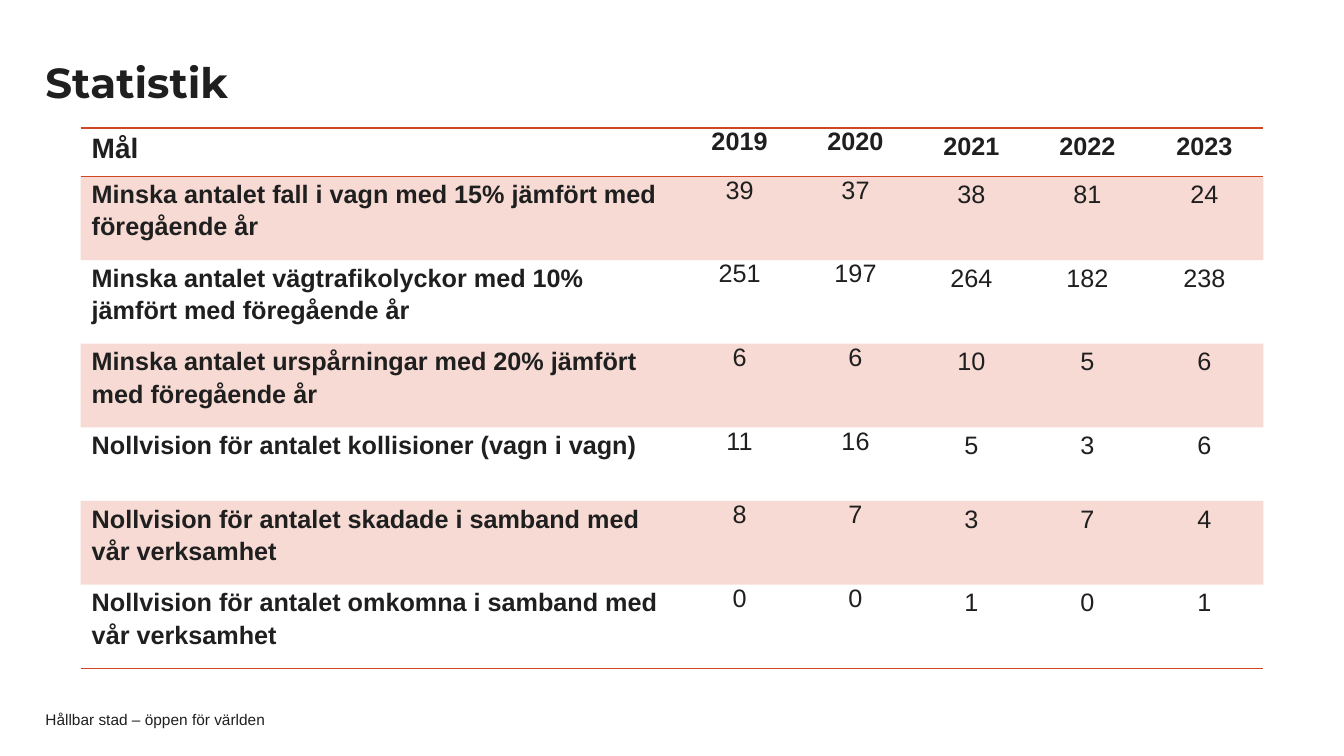
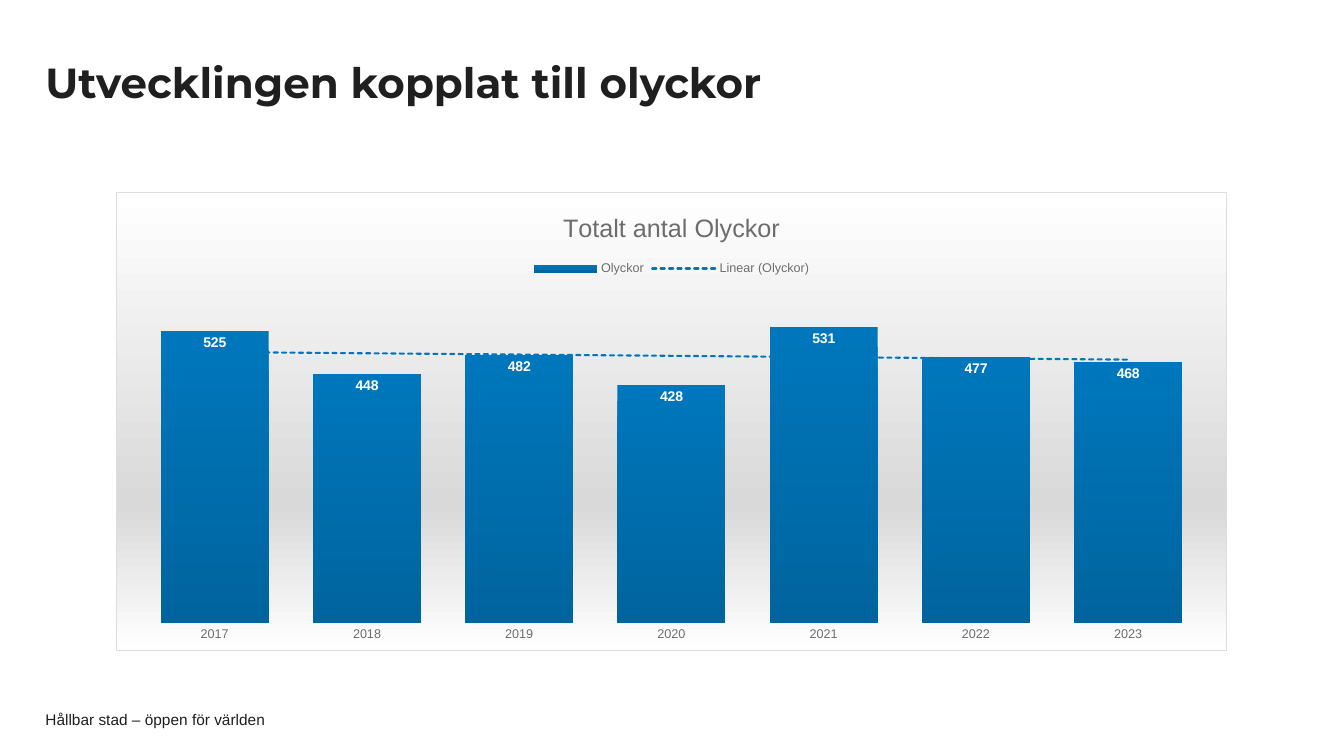
from dataclasses import dataclass

from lxml import etree
from pptx import Presentation
from pptx.chart.data import CategoryChartData
from pptx.dml.color import RGBColor
from pptx.enum.chart import (XL_CHART_TYPE, XL_LABEL_POSITION,
                             XL_LEGEND_POSITION, XL_TICK_MARK)
from pptx.enum.text import MSO_ANCHOR, PP_ALIGN
from pptx.oxml import parse_xml
from pptx.oxml.ns import nsdecls, qn
from pptx.util import Pt

LEFT, CENTER = PP_ALIGN.LEFT, PP_ALIGN.CENTER
MIDDLE = MSO_ANCHOR.MIDDLE
COLUMN = XL_CHART_TYPE.COLUMN_CLUSTERED
INSIDE = XL_LABEL_POSITION.INSIDE_END
TOP = XL_LEGEND_POSITION.TOP
NO_TICK = XL_TICK_MARK.NONE
PLAIN_GRID = "{2D5ABB26-0587-4C30-8999-92F81FD0307C}"


@dataclass(frozen=True)
class Theme:
    ink: str = "1F1F1F"
    gray: str = "6D6D6D"
    mist: str = "D9D9D9"
    edge: str = "DDDDDD"
    white: str = "FFFFFF"
    red: str = "D24723"
    blue: str = "0077BC"
    navy: str = "00649E"
    body: str = "Arial"
    head: str = "Montserrat"
    title: int = 30
    goal: int = 20
    cell: int = 18
    foot: int = 11
    label: int = 10
    axis: int = 9


T = Theme()

FOOTER = "Hållbar stad – öppen för världen"
WIDTHS = [596, 115, 115, 115, 115, 117]
HEIGHTS = [48, 83, 83, 83, 73, 83, 83]
GOALS = [
    ("Mål", 2019, 2020, 2021, 2022, 2023),
    ("Minska antalet fall i vagn med 15% jämfört med föregående år",
     39, 37, 38, 81, 24),
    ("Minska antalet vägtrafikolyckor med 10% jämfört med föregående år",
     251, 197, 264, 182, 238),
    ("Minska antalet urspårningar med 20% jämfört med föregående år",
     6, 6, 10, 5, 6),
    ("Nollvision för antalet kollisioner (vagn i vagn)", 11, 16, 5, 3, 6),
    ("Nollvision för antalet skadade i samband med vår verksamhet",
     8, 7, 3, 7, 4),
    ("Nollvision för antalet omkomna i samband med vår verksamhet",
     0, 0, 1, 0, 1),
]
YEARS = [str(year) for year in range(2017, 2024)]
COUNTS = [525, 448, 482, 428, 531, 477, 468]


def px(n):
    """Turn px, 100 to the inch, into EMU."""
    return n * 9144


def style(font, size, color=T.ink, face=T.body, bold=False):
    font.size, font.name, font.bold = Pt(size), face, bold
    font.color.rgb = RGBColor.from_string(color)


def write(frame, words, align=LEFT, lead=None, after=None, **look):
    """Put one formatted paragraph in a text frame."""
    para = frame.paragraphs[0]
    para.alignment = align
    if lead:
        para.line_spacing = lead
    if after:
        para.space_after = Pt(after)
    run = para.add_run()
    run.text = words
    style(run.font, **look)


def add_text(slide, words, left, top, width, height, pad=0, **look):
    frame = slide.shapes.add_textbox(
        px(left), px(top), px(width), px(height)).text_frame
    frame.word_wrap = True
    frame.vertical_anchor = MIDDLE
    frame.margin_left = frame.margin_right = 0
    frame.margin_top = frame.margin_bottom = px(pad)
    write(frame, words, **look)


def add_slide(deck, title):
    """Add a blank slide with the shared title and footer."""
    slide = deck.slides.add_slide(deck.slide_layouts[6])
    add_text(slide, FOOTER, 45, 706, 945, 16, size=T.foot)
    add_text(slide, title, 45, 44, 1003, 81, pad=5, lead=0.9,
             size=T.title, face=T.head, bold=True)
    return slide


def rule(cell, side):
    """Draw a thin red line on a cell's top (T) or bottom (B)."""
    cell._tc.get_or_add_tcPr().insert(0, parse_xml(
        f'<a:ln{side} {nsdecls("a")} w="12700"><a:solidFill>'
        f'<a:srgbClr val="{T.red}"/></a:solidFill></a:ln{side}>'))


def tint(cell):
    cell.fill.solid()
    cell.fill.fore_color.rgb = RGBColor.from_string(T.red)
    color = cell._tc.tcPr.find(".//" + qn("a:srgbClr"))
    etree.SubElement(color, qn("a:alpha"), val="20000")


def fill_cell(cell, value, row, col):
    cell.margin_left = cell.margin_right = px(11)
    cell.margin_top = cell.margin_bottom = 0
    loose = col not in (1, 2)
    write(cell.text_frame, str(value),
          align=CENTER if col else LEFT,
          lead=1.15 if loose else None, after=8 if loose else None,
          size=T.cell if row or col else T.goal,
          bold=row == 0 or col == 0)
    if row % 2:
        tint(cell)
    else:
        cell.fill.background()
    if row in (0, len(GOALS) - 1):
        rule(cell, "B")
    if row == 0:
        rule(cell, "T")


def add_goals(slide):
    table = slide.shapes.add_table(
        len(GOALS), len(WIDTHS), px(80), px(127),
        px(sum(WIDTHS)), px(sum(HEIGHTS))).table
    table.first_row = table.horz_banding = False
    table._tbl.tblPr.find(qn("a:tableStyleId")).text = PLAIN_GRID
    for col, width in zip(table.columns, WIDTHS):
        col.width = px(width)
    for r, (height, goal) in enumerate(zip(HEIGHTS, GOALS)):
        table.rows[r].height = px(height)
        for c, value in enumerate(goal):
            fill_cell(table.cell(r, c), value, r, c)


def fade(*stops):
    """Return the XML of a fill that runs from top to bottom."""
    marks = "".join(
        f'<a:gs pos="{at * 1000}"><a:srgbClr val="{color}"/></a:gs>'
        for at, color in stops)
    return (f'<a:gradFill {nsdecls("a")}><a:gsLst>{marks}</a:gsLst>'
            '<a:lin ang="5400000" scaled="0"/></a:gradFill>')


def add_trend(series):
    series._element.find(qn("c:cat")).addprevious(parse_xml(
        f'<c:trendline {nsdecls("c", "a")}><c:spPr><a:ln w="19050" cap="rnd">'
        f'<a:solidFill><a:srgbClr val="{T.blue}"/></a:solidFill>'
        '<a:prstDash val="sysDash"/></a:ln></c:spPr>'
        '<c:trendlineType val="linear"/><c:dispRSqr val="0"/>'
        '<c:dispEq val="0"/></c:trendline>'))


def back(chart):
    """Give the chart area its fade and thin border."""
    area = fade((0, T.white), (68, T.mist), (100, T.white))
    chart._chartSpace.find(qn("c:chart")).addnext(parse_xml(
        f'<c:spPr {nsdecls("c", "a")}>{area}<a:ln w="9525"><a:solidFill>'
        f'<a:srgbClr val="{T.edge}"/></a:solidFill></a:ln></c:spPr>'))


def add_bars(slide):
    data = CategoryChartData()
    data.categories = YEARS
    data.add_series("Olyckor", COUNTS)
    chart = slide.shapes.add_chart(
        COLUMN, px(115), px(190), px(1102), px(456), data).chart
    style(chart.font, T.label)
    back(chart)

    chart.has_title = True
    write(chart.chart_title.text_frame, "Totalt antal Olyckor",
          align=CENTER, size=T.cell, color=T.gray)
    chart.chart_title.include_in_layout = False
    chart.has_legend = True
    chart.legend.position = TOP
    chart.legend.include_in_layout = False
    style(chart.legend.font, T.axis, T.gray)

    years, scale = chart.category_axis, chart.value_axis
    years.major_tick_mark = NO_TICK
    years.format.line.fill.background()
    style(years.tick_labels.font, T.axis, T.gray)
    scale.visible = scale.has_major_gridlines = False
    scale.minimum_scale = 0

    plot = chart.plots[0]
    plot.gap_width = 41
    plot.vary_by_categories = False
    bars = plot.series[0]
    bars._element.get_or_add_spPr().append(
        parse_xml(fade((0, T.blue), (100, T.navy))))
    labels = bars.data_labels
    labels.show_value = True
    labels.position = INSIDE
    style(labels.font, T.label, T.white, bold=True)
    add_trend(bars)


def main():
    deck = Presentation()
    deck.slide_width, deck.slide_height = px(1333), px(750)
    add_goals(add_slide(deck, "Statistik"))
    add_bars(add_slide(deck, "Utvecklingen kopplat till olyckor"))
    deck.save("out.pptx")


if __name__ == "__main__":
    main()
